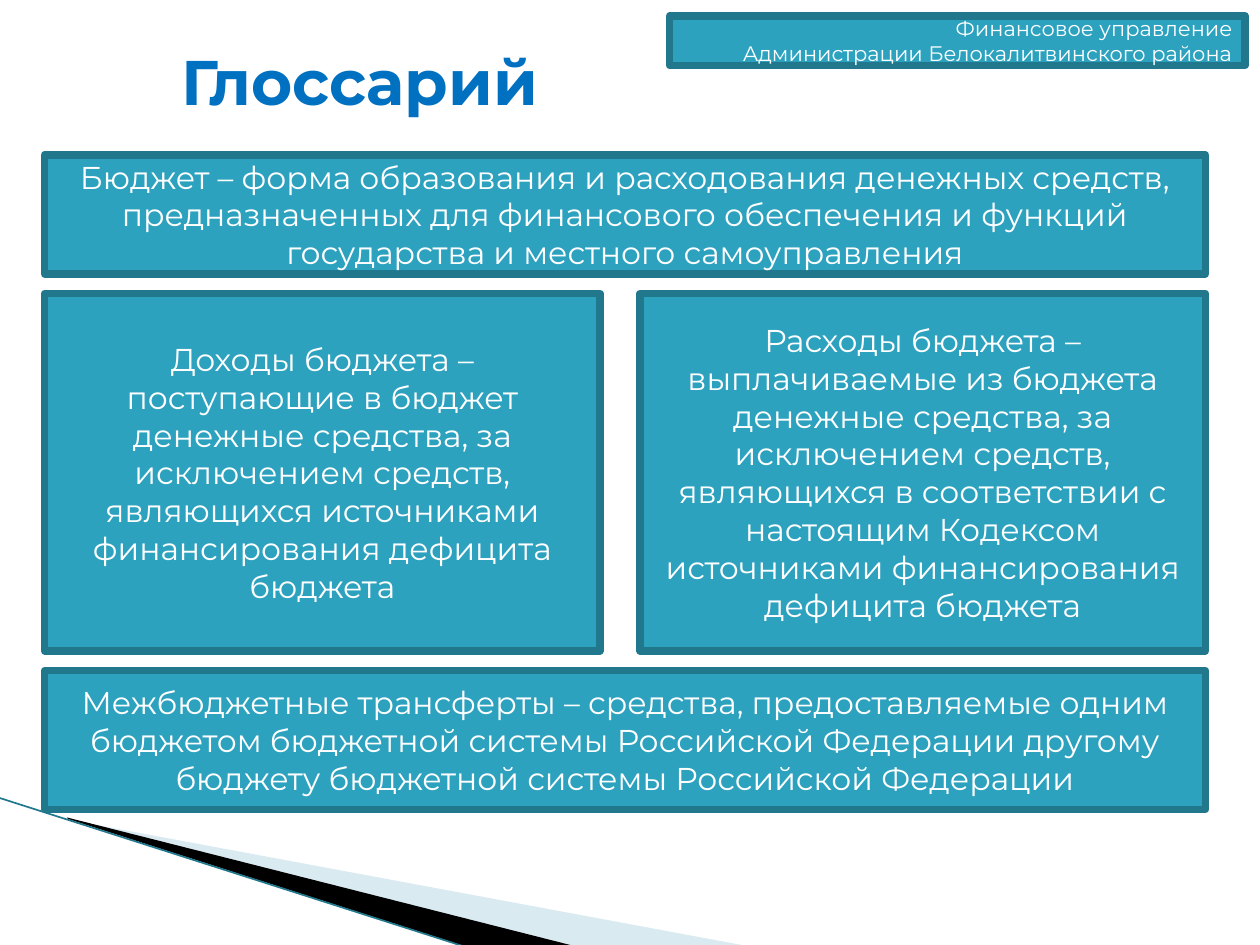
from dataclasses import dataclass

from lxml import etree
from pptx import Presentation
from pptx.dml.color import RGBColor
from pptx.enum.shapes import MSO_CONNECTOR, MSO_SHAPE
from pptx.enum.text import MSO_ANCHOR, PP_ALIGN
from pptx.oxml.ns import qn
from pptx.util import Cm, Pt

RECTANGLE = MSO_SHAPE.RECTANGLE
STRAIGHT = MSO_CONNECTOR.STRAIGHT
MIDDLE = MSO_ANCHOR.MIDDLE
CENTER = PP_ALIGN.CENTER
RIGHT = PP_ALIGN.RIGHT


@dataclass(frozen=True)
class Theme:
    """Colours, font and sizes of the slide."""
    font: str = "Montserrat"
    title_color: str = "0070C0"
    box_fill: str = "2DA2BF"
    box_line: str = "21788D"
    box_text: str = "FFFFFF"
    light_wedge: str = "A0CBDC"
    dark_wedge: str = "000000"
    title_size: float = 36
    body_size: float = 18
    header_size: float = 12
    box_line_width: float = 4.33
    edge_line_width: float = 0.95


THEME = Theme()

MARGIN = 0.9
CONTENT_WIDTH = 23.4
GAP = 0.4
FIRST_ROW_TOP = 3.12

HEADER = ["Финансовое управление", "Администрации Белокалитвинского района"]
BUDGET = ("Бюджет – форма образования и расходования денежных средств, "
          "предназначенных для финансового обеспечения и функций "
          "государства и местного самоуправления")
INCOME = ("Доходы бюджета – поступающие в бюджет денежные средства, "
          "за исключением средств, являющихся источниками "
          "финансирования дефицита бюджета")
EXPENSES = ("Расходы бюджета – выплачиваемые из бюджета денежные средства, "
            "за исключением средств, являющихся в соответствии с настоящим "
            "Кодексом источниками финансирования дефицита бюджета")
TRANSFERS = ("Межбюджетные трансферты – средства, предоставляемые одним "
             "бюджетом бюджетной системы Российской Федерации другому "
             "бюджету бюджетной системы Российской Федерации")

ROWS = [
    (2.4, [(CONTENT_WIDTH, BUDGET)]),
    (7.2, [(11.2, INCOME), (11.4, EXPENSES)]),
    (2.8, [(CONTENT_WIDTH, TRANSFERS)]),
]

LIGHT_WEDGE = [(1.4, 16.53), (15.11, 19.08), (11.58, 19.08), (1.4, 16.51)]
DARK_WEDGE = [(1.35, 16.48), (11.61, 19.08), (9.45, 19.1), (1.37, 16.51)]
EDGE_LINE = (-0.03, 16.08, 9.42, 19.1)


def rgb(color):
    """Turn a hex string into a colour."""
    return RGBColor.from_string(color)


def write_text(shape, lines, size, color, alignment=CENTER, bold=False):
    """Write one paragraph per line, centred vertically."""
    frame = shape.text_frame
    frame.word_wrap = True
    frame.vertical_anchor = MIDDLE
    frame.text = "\n".join(lines)
    font_format = {"name": THEME.font, "size": Pt(size), "bold": bold}
    for paragraph in frame.paragraphs:
        paragraph.alignment = alignment
        font = paragraph.runs[0].font
        for attribute, value in font_format.items():
            setattr(font, attribute, value)
        font.color.rgb = rgb(color)


def add_box(slide, bounds, lines, size=THEME.body_size, alignment=CENTER):
    """Add an outlined rectangle with text."""
    shape = slide.shapes.add_shape(RECTANGLE, *map(Cm, bounds))
    shape.shadow.inherit = False
    shape.fill.solid()
    shape.fill.fore_color.rgb = rgb(THEME.box_fill)
    shape.line.color.rgb = rgb(THEME.box_line)
    shape.line.width = Pt(THEME.box_line_width)
    write_text(shape, lines, size, THEME.box_text, alignment)


def add_wedge(slide, points, color, opacity=100):
    """Add a filled polygon with the given opacity in percent."""
    start, *others = [(Cm(x), Cm(y)) for x, y in points]
    builder = slide.shapes.build_freeform(*start)
    builder.add_line_segments(others)
    shape = builder.convert_to_shape()
    shape.shadow.inherit = False
    shape.fill.solid()
    shape.fill.fore_color.rgb = rgb(color)
    shape.line.fill.background()
    if opacity < 100:
        fill_color = shape.fill._xPr.find(".//" + qn("a:srgbClr"))
        alpha = etree.SubElement(fill_color, qn("a:alpha"))
        alpha.set("val", str(opacity * 1000))


def add_edge_line(slide):
    """Add the thin line along the wedges."""
    connector = slide.shapes.add_connector(STRAIGHT, *map(Cm, EDGE_LINE))
    connector.line.color.rgb = rgb(THEME.box_line)
    connector.line.width = Pt(THEME.edge_line_width)
    etree.SubElement(connector._element.spPr, qn("a:effectLst"))


def add_title(slide):
    """Add the slide title."""
    shape = slide.shapes.add_textbox(Cm(-0.7), Cm(0), Cm(15.9), Cm(3.23))
    write_text(shape, ["Глоссарий"], THEME.title_size, THEME.title_color,
               bold=True)


def add_definitions(slide):
    """Stack the rows of definitions, each spread over the content width."""
    top = FIRST_ROW_TOP
    for height, cells in ROWS:
        spare = CONTENT_WIDTH - sum(width for width, _ in cells)
        column_gap = spare / max(len(cells) - 1, 1)
        left = MARGIN
        for width, text in cells:
            add_box(slide, (left, top, width, height), [text])
            left += width + column_gap
        top += height + GAP


def main():
    """Build and save the glossary slide."""
    presentation = Presentation()
    presentation.slide_width = Cm(25.4)
    presentation.slide_height = Cm(19.05)
    slide = presentation.slides.add_slide(presentation.slide_layouts[6])
    add_wedge(slide, LIGHT_WEDGE, THEME.light_wedge, opacity=40)
    add_wedge(slide, DARK_WEDGE, THEME.dark_wedge)
    add_edge_line(slide)
    add_title(slide)
    add_box(slide, (13.5, 0.32, 11.6, 1), HEADER, THEME.header_size, RIGHT)
    add_definitions(slide)
    presentation.save("out.pptx")


if __name__ == "__main__":
    main()
